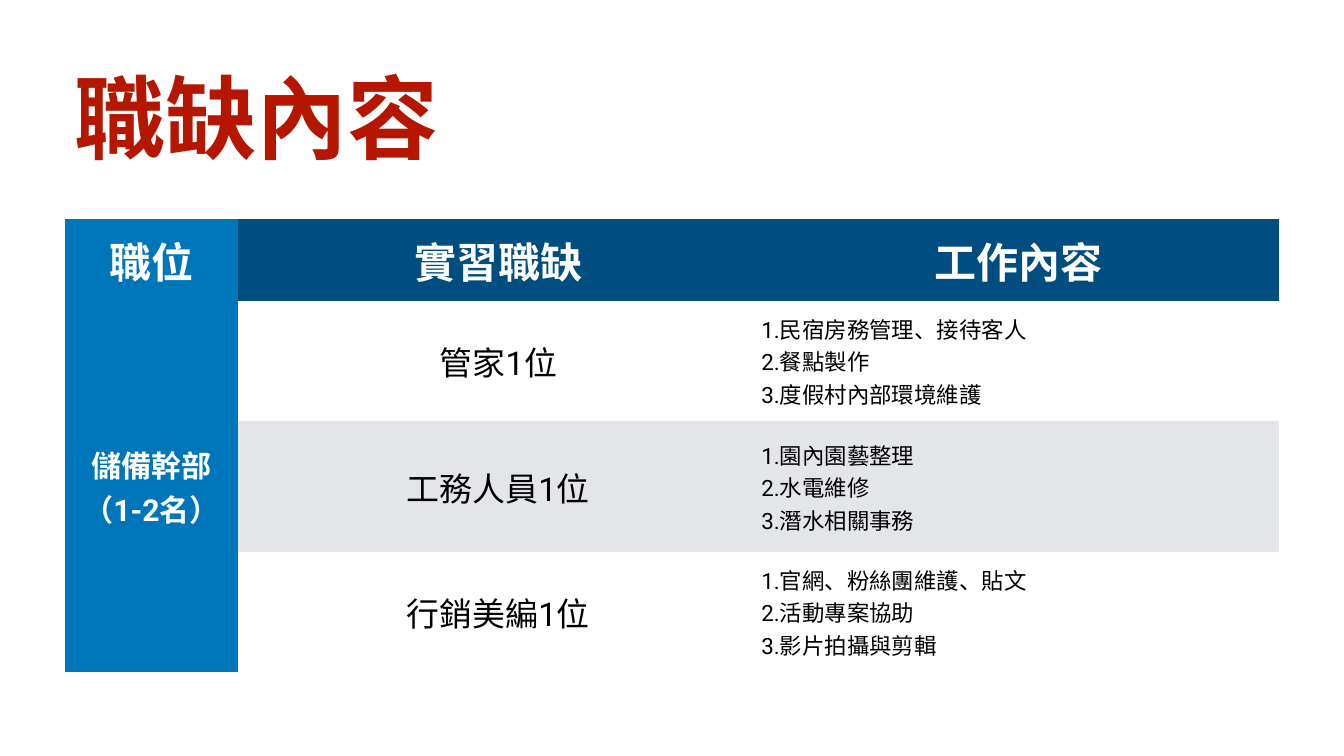
from pptx import Presentation
from pptx.dml.color import RGBColor
from pptx.enum.text import MSO_ANCHOR as Anchor, MSO_AUTO_SIZE as AutoSize, PP_ALIGN as Align
from pptx.util import Pt

INSET = Pt(4)
WHITE, BLACK, GREY = "FFFFFF", "000000", "E3E5E8"
NAVY, BLUE, RED = "004D80", "0076BA", "B51600"


def color(value):
    return RGBColor.from_string(value)


def format_text(text_frame, size, text_color, bold, alignment):
    for paragraph in text_frame.paragraphs:
        paragraph.alignment = alignment
        for run in paragraph.runs:
            run.font.name = "Roboto"
            run.font.size = Pt(size)
            run.font.bold = bold
            run.font.color.rgb = color(text_color)


presentation = Presentation()
presentation.slide_width = Pt(1920)
presentation.slide_height = Pt(1080)
slide = presentation.slides.add_slide(presentation.slide_layouts[5])

title = slide.shapes.title
title.left, title.top, title.width, title.height = Pt(101.5), Pt(70.5), Pt(529), Pt(190)
title_frame = title.text_frame
title_frame.text = "職缺內容"
title_frame.word_wrap = False
title_frame.auto_size = AutoSize.NONE
title_frame.vertical_anchor = Anchor.MIDDLE
title_frame.margin_left = title_frame.margin_right = INSET
title_frame.margin_top = title_frame.margin_bottom = INSET
format_text(title_frame, 130, RED, True, Align.CENTER)

headers = ["職位", "實習職缺", "工作內容"]
jobs = [
    ("管家1位", "1.民宿房務管理、接待客人\v2.餐點製作\v3.度假村內部環境維護"),
    ("工務人員1位", "1.園內園藝整理\v2.水電維修\v3.潛水相關事務"),
    ("行銷美編1位", "1.官網、粉絲團維護、貼文\v2.活動專案協助\v3.影片拍攝與剪輯"),
]
column_widths = [247, 743.75, 743.75]
row_heights = [117, 172, 187, 171]

table = slide.shapes.add_table(
    len(row_heights), len(column_widths), Pt(93), Pt(313),
    Pt(sum(column_widths)), Pt(sum(row_heights))).table
for column, width in zip(table.columns, column_widths):
    column.width = Pt(width)
for row, height in zip(table.rows, row_heights):
    row.height = Pt(height)
table.cell(1, 0).merge(table.cell(3, 0))

cells = [(0, column, text, 60, WHITE, True, Align.CENTER, NAVY if column else BLUE)
         for column, text in enumerate(headers)]
cells.append((1, 0, "儲備幹部（1-2名）", 43, WHITE, True, Align.CENTER, BLUE))
for row, (job, duties) in enumerate(jobs, start=1):
    fill = WHITE if row % 2 else GREY
    cells.append((row, 1, job, 47, BLACK, False, Align.CENTER, fill))
    cells.append((row, 2, duties, 32, BLACK, False, Align.LEFT, fill))

for row, column, text, size, text_color, bold, alignment, fill in cells:
    cell = table.cell(row, column)
    cell.fill.solid()
    cell.fill.fore_color.rgb = color(fill)
    cell.vertical_anchor = Anchor.MIDDLE
    cell.margin_left = cell.margin_right = INSET
    cell.margin_top = cell.margin_bottom = INSET
    cell.text_frame.text = text
    format_text(cell.text_frame, size, text_color, bold, alignment)

style_id = table._tbl.tblPr.find("{*}tableStyleId")
style_id.text = "{2D5ABB26-0587-4C30-8999-92F81FD0307C}"

presentation.save("out.pptx")
